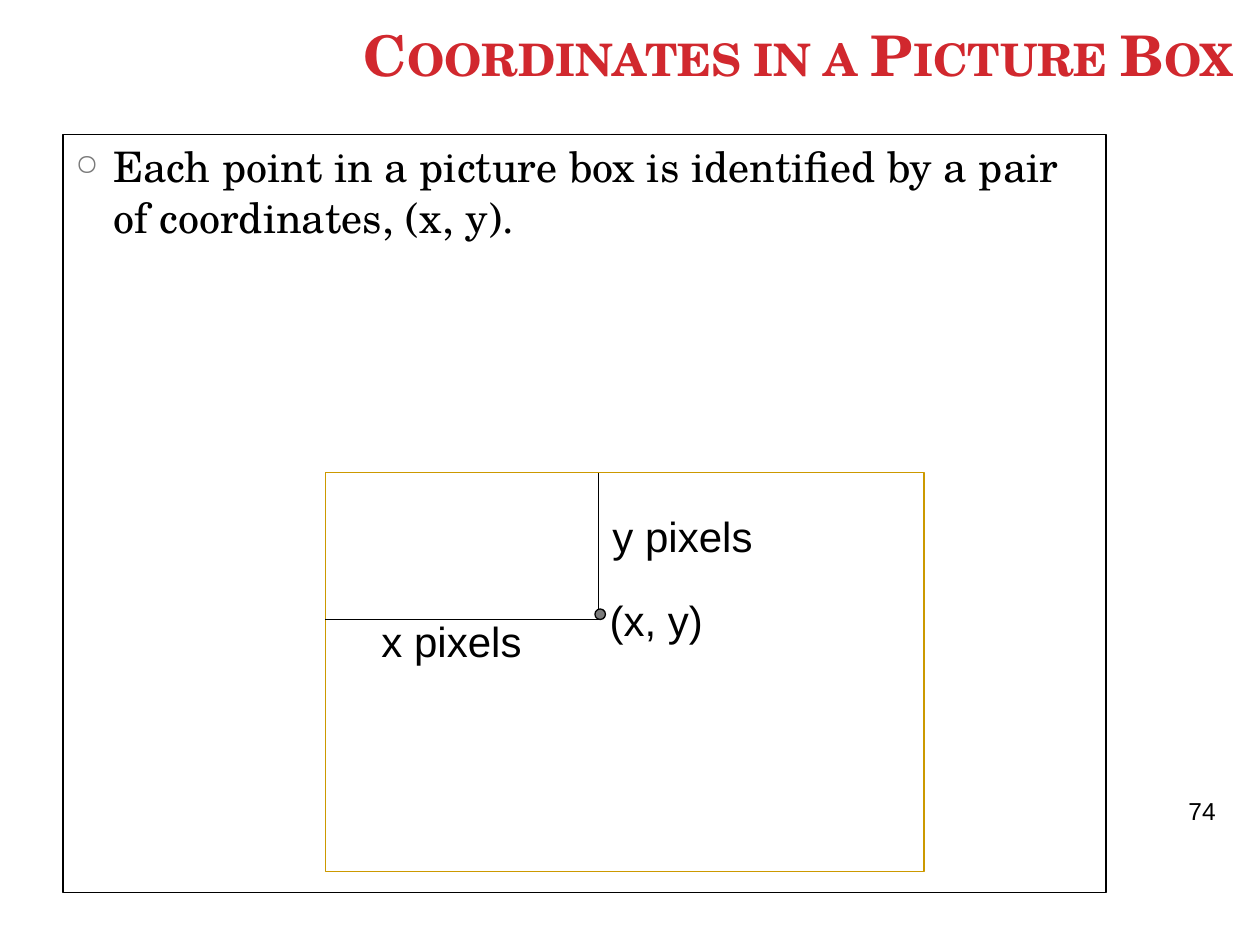
import pptx
import pptx.util
import pptx.dml.color
import pptx.enum.shapes
import pptx.enum.text
import pptx.oxml.ns
import lxml.etree

Pt = pptx.util.Pt
ALIGN = pptx.enum.text.PP_ALIGN
ANCHOR = pptx.enum.text.MSO_ANCHOR
SHAPE = pptx.enum.shapes.MSO_SHAPE

COLORS = {"red": "D1282E", "black": "000000", "white": "FFFFFF", "gray": "7A7A7A", "gold": "CC9900"}
SERIF, SANS = "TeX Gyre Schola", "Arial"

TITLE = "Coordinates in a Picture Box"
STATEMENT = "Each point in a picture box is identified by a pair of coordinates, (x, y)."
PAGE_NUMBER = "74"

TITLE_AREA = (6, 10, 705.5, 44)
BODY_AREA = (36, 77, 596, 433)
NUMBER_AREA = (672, 451.5, 48, 41)
PICTURE_BOX = (186, 270, 342, 228)
POINT = (342, 354)
DOT_SIZE = 6
LABELS = [
    ("x pixels", (186, 348, 144, 36)),
    ("y pixels", (330, 288, 120, 36)),
    ("(x, y)", (336, 336, 78, 36)),
]


def rgb(name):
    return pptx.dml.color.RGBColor.from_string(COLORS[name])


def write(box, text, font, size, color="black", align=ALIGN.LEFT, anchor=ANCHOR.TOP):
    frame = box.text_frame
    frame.word_wrap = True
    frame.auto_size = pptx.enum.text.MSO_AUTO_SIZE.NONE
    frame.vertical_anchor = anchor
    frame.text = text
    para = frame.paragraphs[0]
    para.alignment = align
    span = para.runs[0]
    span.font.name = font
    span.font.size = Pt(size)
    span.font.color.rgb = rgb(color)
    return para, span


def add_label(page, area, text, size, align):
    box = page.shapes.add_textbox(*map(Pt, area))
    write(box, text, SANS, size, align=align)


def add_outline(page, kind, area, fill, line):
    shape = page.shapes.add_shape(kind, *map(Pt, area))
    shape.shadow.inherit = False
    shape.fill.solid()
    shape.fill.fore_color.rgb = rgb(fill)
    shape.line.color.rgb = rgb(line)
    shape.line.width = Pt(0.75)
    return shape


def add_line(page, start, end):
    line = page.shapes.add_connector(
        pptx.enum.shapes.MSO_CONNECTOR.STRAIGHT, *map(Pt, start + end))
    line.line.color.rgb = rgb("black")
    line.line.width = Pt(0.75)
    properties = line._element.spPr
    lxml.etree.SubElement(properties, pptx.oxml.ns.qn("a:effectLst"))


def add_bullet(para, symbol, color, percent):
    qn = pptx.oxml.ns.qn
    properties = para._p.get_or_add_pPr()
    properties.set("marL", str(Pt(21.6)))
    properties.set("indent", str(-Pt(21.6)))
    tint = lxml.etree.SubElement(properties, qn("a:buClr"))
    lxml.etree.SubElement(tint, qn("a:srgbClr"), val=COLORS[color])
    lxml.etree.SubElement(properties, qn("a:buSzPct"), val=str(percent * 1000))
    lxml.etree.SubElement(properties, qn("a:buChar"), char=symbol)


def main():
    deck = pptx.Presentation()
    deck.slide_width, deck.slide_height = Pt(720), Pt(540)
    page = deck.slides.add_slide(deck.slide_layouts[5])

    title = page.shapes.title
    title.left, title.top, title.width, title.height = map(Pt, TITLE_AREA)
    para, span = write(title, TITLE, SERIF, 32, "red", ALIGN.RIGHT, ANCHOR.BOTTOM)
    span.font.bold = True
    span.font._element.set("cap", "small")

    body = add_outline(page, SHAPE.RECTANGLE, BODY_AREA, "white", "black")
    para, span = write(body, STATEMENT, SERIF, 24)
    add_bullet(para, "○", "gray", 70)

    add_label(page, NUMBER_AREA, PAGE_NUMBER, 14, ALIGN.LEFT)

    add_outline(page, SHAPE.RECTANGLE, PICTURE_BOX, "white", "gold")
    x, y = POINT
    left, top = PICTURE_BOX[:2]
    add_line(page, (left, y), POINT)
    add_line(page, POINT, (x, top))
    for text, area in LABELS:
        add_label(page, area, text, 24, ALIGN.CENTER)
    dot_area = (x - DOT_SIZE / 2 + 1, y - DOT_SIZE, DOT_SIZE, DOT_SIZE)
    add_outline(page, SHAPE.OVAL, dot_area, "gray", "black")

    deck.save("out.pptx")


if __name__ == "__main__":
    main()
